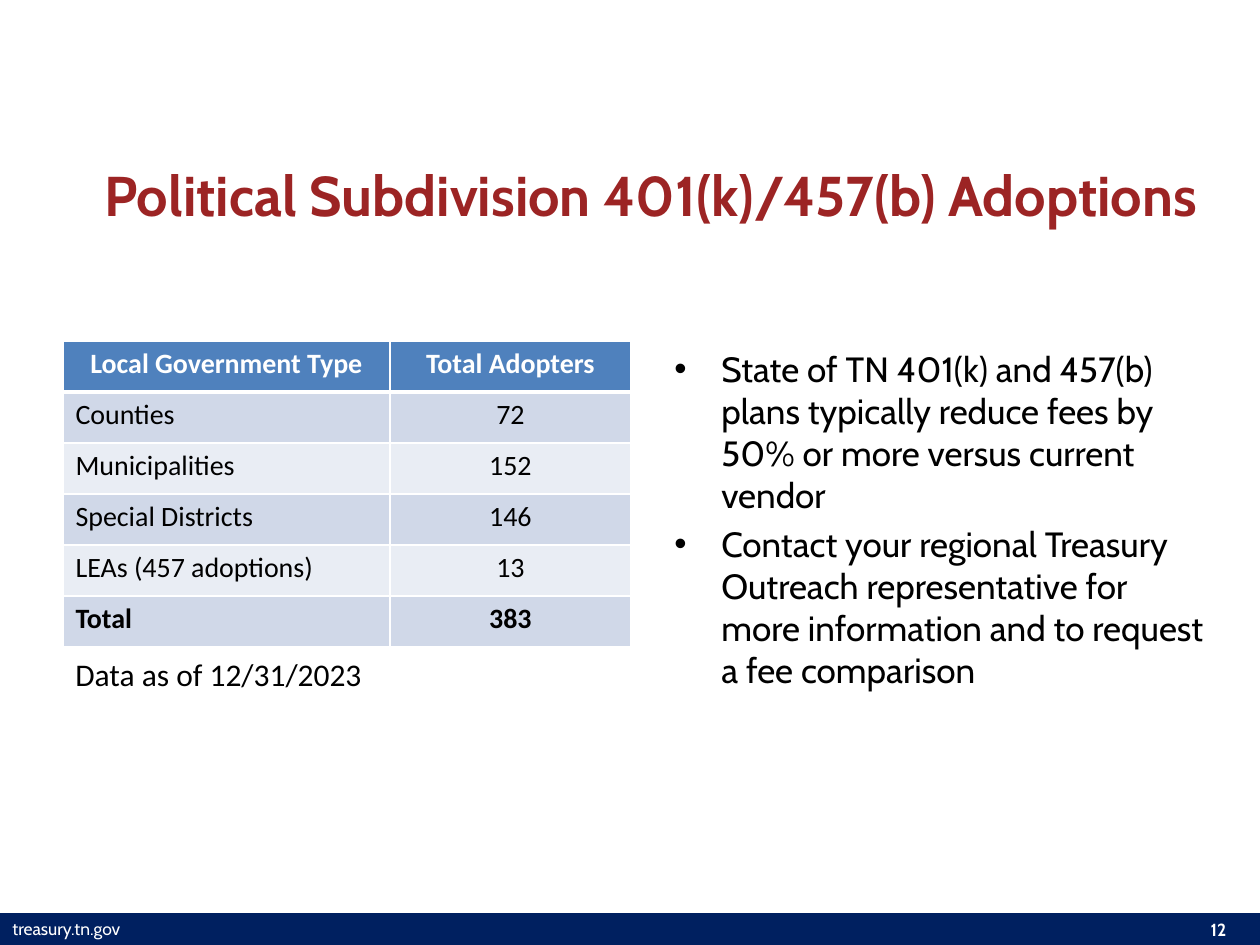
from lxml import etree
from pptx import Presentation
from pptx.dml.color import RGBColor
from pptx.enum.shapes import MSO_SHAPE
from pptx.enum.text import MSO_ANCHOR, PP_ALIGN
from pptx.oxml.ns import qn
from pptx.util import Emu, Pt

LEFT, CENTER = PP_ALIGN.LEFT, PP_ALIGN.CENTER
TOP, MIDDLE = MSO_ANCHOR.TOP, MSO_ANCHOR.MIDDLE
PX_PER_INCH = 126
HEADING, BODY = "Cabin", "Calibri"
WHITE, BLACK, NAVY, RED = "FFFFFF", "000000", "002060", "9C2424"
HEADER_FILL, BAND_FILLS = "4F81BD", ("D0D8E8", "E9EDF4")

TITLE = "Political Subdivision 401(k)/457(b) Adoptions"
POINTS = [
    "State of TN 401(k) and 457(b) plans typically reduce fees by 50% or more "
    "versus current vendor",
    "Contact your regional Treasury Outreach representative for more information "
    "and to request a fee comparison",
]
ADOPTERS = [
    ("Local Government Type", "Total Adopters"),
    ("Counties", "72"),
    ("Municipalities", "152"),
    ("Special Districts", "146"),
    ("LEAs (457 adoptions)", "13"),
    ("Total", "383"),
]
DATE_NOTE = "Data as of 12/31/2023"
SITE, PAGE = "treasury.tn.gov", "12"

COLUMN_WIDTHS = (327, 241)
ROW_HEIGHT = 51
TABLE_LEFT, CONTENT_TOP = 63, 341


def px(length):
    return Emu(round(length * 914400 / PX_PER_INCH))


def rgb(color):
    return RGBColor.from_string(color)


def style(paragraph, size, face, color, bold=False, align=LEFT):
    paragraph.alignment = align
    for run in paragraph.runs:
        run.font.size = Pt(size)
        run.font.name = face
        run.font.bold = bold
        run.font.color.rgb = rgb(color)


def add_text(slide, box, lines, *look, anchor=TOP):
    """Add a wrapped text box and return its text frame; look goes to style()."""
    frame = slide.shapes.add_textbox(*map(px, box)).text_frame
    frame.word_wrap = True
    frame.vertical_anchor = anchor
    frame.text = "\n".join(lines)
    for paragraph in frame.paragraphs:
        style(paragraph, *look)
    return frame


def add_bullet(paragraph, indent):
    properties = paragraph._p.get_or_add_pPr()
    properties.set("marL", str(px(indent)))
    properties.set("indent", str(-px(indent)))
    etree.SubElement(properties, qn("a:buFont"), typeface="Arial")
    etree.SubElement(properties, qn("a:buChar"), char="•")


def set_borders(cell, color, widths):
    """Draw the cell's edges; widths maps L, R, T and B to points."""
    properties = cell._tc.get_or_add_tcPr()
    for side in "LRTB":
        line = etree.SubElement(properties, qn("a:ln" + side), w=str(Pt(widths[side])))
        fill = etree.SubElement(line, qn("a:solidFill"))
        etree.SubElement(fill, qn("a:srgbClr"), val=color)


def add_footer(slide):
    bar = slide.shapes.add_shape(MSO_SHAPE.RECTANGLE, *map(px, (-20, 913, 1291, 32)))
    bar.shadow.inherit = False
    bar.fill.solid()
    bar.fill.fore_color.rgb = rgb(NAVY)
    bar.line.fill.background()
    add_text(slide, (0, 912, 231, 34), [SITE], 10, HEADING, WHITE)
    add_text(slide, (1187, 913, 63, 34), [PAGE], 10, HEADING, WHITE, True, CENTER)


def add_adopters_table(slide):
    box = (TABLE_LEFT, CONTENT_TOP, sum(COLUMN_WIDTHS), ROW_HEIGHT * len(ADOPTERS))
    table = slide.shapes.add_table(
        len(ADOPTERS), len(COLUMN_WIDTHS), *map(px, box)).table
    for column, width in zip(table.columns, COLUMN_WIDTHS):
        column.width = px(width)
    last = len(ADOPTERS) - 1
    for r, values in enumerate(ADOPTERS):
        table.rows[r].height = px(ROW_HEIGHT)
        header = r == 0
        widths = {"L": 1, "R": 1, "T": 3 if r == 1 else 1, "B": 3 if header else 1}
        for c, value in enumerate(values):
            cell = table.cell(r, c)
            set_borders(cell, WHITE, widths)
            cell.fill.solid()
            cell.fill.fore_color.rgb = rgb(
                HEADER_FILL if header else BAND_FILLS[(r - 1) % 2])
            cell.text_frame.text = value
            style(cell.text_frame.paragraphs[0], 16, BODY,
                  WHITE if header else BLACK, r in (0, last),
                  CENTER if header or c else LEFT)


def main():
    presentation = Presentation()
    presentation.slide_width, presentation.slide_height = px(1260), px(945)
    slide = presentation.slides.add_slide(presentation.slide_layouts[6])

    add_footer(slide)
    points = add_text(slide, (662, CONTENT_TOP, 557, 509), POINTS, 20, HEADING, BLACK)
    for i, paragraph in enumerate(points.paragraphs):
        add_bullet(paragraph, 47)
        if i:
            paragraph.space_before = Pt(4)
    add_text(slide, (42, 136, 1218, 116), [TITLE], 32, HEADING, RED, True, CENTER,
             anchor=MIDDLE)
    add_adopters_table(slide)
    add_text(slide, (TABLE_LEFT, 649, sum(COLUMN_WIDTHS), 43), [DATE_NOTE],
             18, BODY, BLACK)
    presentation.save("out.pptx")


if __name__ == "__main__":
    main()
